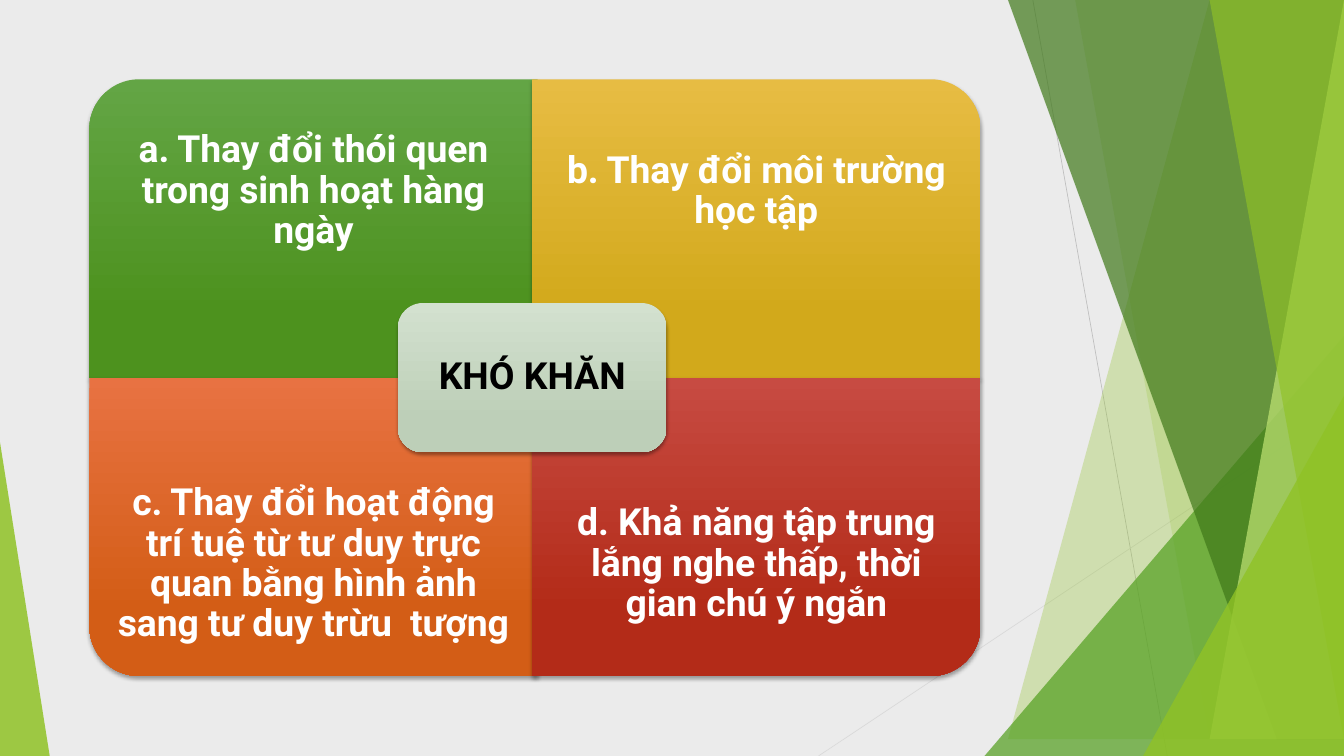
"""Builds a slide with four difficulties around a central label, beside green facets."""
import lxml.etree
import pptx
import pptx.dml.color
import pptx.enum.shapes
import pptx.enum.text
import pptx.oxml
import pptx.oxml.ns
import pptx.util

Inches = pptx.util.Inches
SHAPES = pptx.enum.shapes.MSO_SHAPE

WIDTH, HEIGHT = 20, 11.25
COLORS = {
    "background": "EBEBEB", "white": "FFFFFF", "black": "000000",
    "line": "BFBFBF", "pale line": "D9D9D9",
    "lime": "90C226", "green": "54A021", "forest": "3F7819", "mint": "C0E474",
}
LINES = [((15.37, 0), (17.37, HEIGHT), "line"), ((WIDTH, 6.04), (12.18, HEIGHT), "pale line")]
FACETS = [
    ("band", (18.42, 15.06), "lime", 30),
    ("band", (15.75, 17.74), "lime", 20),
    ("triangle", (14.65, 5, 5.35, 6.25, 1), "green", 72),
    ("band", (15.31, 19.37), "forest", 70),
    ("band", (19.55, 17.88), "mint", 70),
    ("band", (17.94, 19.76), "lime", 65),
    ("triangle", (17.01, 5.89, 2.99, 5.36, 1), "lime", 80),
    ("triangle", (0, 6.58, 0.74, 4.67, 0), "lime", 85),
]
PANEL_LEFT, PANEL_TOP, PANEL_STEP = 1.33, 1.18, 6.59
PANEL_WIDTH, PANEL_HEIGHT, TEXT_HEIGHT = 6.67, 4.44, 3.33
PANELS = [
    (0, 0, 270, "63A545", "4D921E", ["a. Thay ", "đổi ", "thói quen trong sinh hoạt hàng ngày"]),
    (1, 0, 0, "E7BC43", "D2A91B", ["b. Thay đổi môi trường học tập"]),
    (0, 1, 180, "E87242", "D35D16",
     ["c. Thay đổi hoạt động trí tuệ từ tư ", "duy ", "trực quan bằng hình ảnh sang tư ",
      "duy ", "trừu  tượng"]),
    (1, 1, 90, "C74B42", "B32B18",
     ["d. K", "hả ", "năng tập ", "trung ", "lắng ", "nghe ", "thấp, thời gian chú ý ngắn"]),
]
CENTER = ((5.92, 4.51, 4, 2.22), "D3E1CF", "BDCFB8", ["KHÓ KHĂN"])


def rgb(name):
    return pptx.dml.color.RGBColor.from_string(COLORS[name])


def lengths(values):
    return [Inches(value) for value in values]


def add_line(slide, start, end, color):
    line = slide.shapes.add_connector(
        pptx.enum.shapes.MSO_CONNECTOR.STRAIGHT, *lengths(start + end))
    line.line.color.rgb = rgb(color)
    line.line.width = pptx.util.Pt(0.75)
    lxml.etree.SubElement(line._element.spPr, pptx.oxml.ns.qn("a:effectLst"))


def add_facet(slide, kind, geometry, color, opacity):
    if kind == "band":
        top_x, bottom_x = geometry
        builder = slide.shapes.build_freeform(top_x, 0, scale=Inches(1))
        builder.add_line_segments([(WIDTH, 0), (WIDTH, HEIGHT), (bottom_x, HEIGHT)])
        facet = builder.convert_to_shape()
    else:
        facet = slide.shapes.add_shape(SHAPES.ISOSCELES_TRIANGLE, *lengths(geometry[:4]))
        facet.adjustments[0] = geometry[4]
    facet.shadow.inherit = False
    facet.line.fill.background()
    facet.fill.solid()
    facet.fill.fore_color.rgb = rgb(color)
    tint = facet._element.spPr.find(".//" + pptx.oxml.ns.qn("a:srgbClr"))
    lxml.etree.SubElement(tint, pptx.oxml.ns.qn("a:alpha"), val=str(opacity * 1000))


def add_panel(slide, preset, area, rotation, light, dark):
    left, top, width, height = area
    if rotation % 180:
        left, top = left + (width - height) / 2, top + (height - width) / 2
        width, height = height, width
    panel = slide.shapes.add_shape(preset, *lengths((left, top, width, height)))
    panel.rotation = rotation
    panel.line.fill.background()
    panel.shadow.inherit = False
    namespace = pptx.oxml.ns.nsdecls("a")
    properties = panel._element.spPr
    gradient = pptx.oxml.parse_xml(
        f'<a:gradFill {namespace} rotWithShape="0"><a:gsLst>'
        f'<a:gs pos="0"><a:srgbClr val="{light}"/></a:gs>'
        f'<a:gs pos="78000"><a:srgbClr val="{dark}"/></a:gs>'
        '</a:gsLst><a:lin ang="5400000" scaled="0"/></a:gradFill>')
    properties.find(pptx.oxml.ns.qn("a:prstGeom")).addnext(gradient)
    properties.find(pptx.oxml.ns.qn("a:effectLst")).append(pptx.oxml.parse_xml(
        f'<a:outerShdw {namespace} blurRad="50800" dist="38100" dir="5400000" rotWithShape="0">'
        f'<a:srgbClr val="{COLORS["black"]}"><a:alpha val="35000"/></a:srgbClr></a:outerShdw>'))


def add_label(slide, area, spans, color, inset):
    box = slide.shapes.add_textbox(*lengths(area))
    frame = box.text_frame
    frame.word_wrap = True
    frame.vertical_anchor = pptx.enum.text.MSO_ANCHOR.MIDDLE
    frame.margin_left = frame.margin_right = Inches(inset)
    frame.margin_top = frame.margin_bottom = Inches(inset)
    para = frame.paragraphs[0]
    para.alignment = pptx.enum.text.PP_ALIGN.CENTER
    para.line_spacing = 0.9
    for index, text in enumerate(spans):
        span = para.add_run()
        span.text = text
        span.font.name = "Roboto"
        span.font.size = pptx.util.Pt(40)
        span.font.bold = True
        span.font.color.rgb = rgb(color)
        if color == "white" and index % 2 == 0:
            span.font._element.set("spc", "-10")


def main():
    deck = pptx.Presentation()
    deck.slide_width, deck.slide_height = Inches(WIDTH), Inches(HEIGHT)
    slide = deck.slides.add_slide(deck.slide_layouts[6])
    slide.background.fill.solid()
    slide.background.fill.fore_color.rgb = rgb("background")
    for line in LINES:
        add_line(slide, *line)
    for facet in FACETS:
        add_facet(slide, *facet)
    for column, row, rotation, light, dark, spans in PANELS:
        left = PANEL_LEFT + column * PANEL_STEP
        top = PANEL_TOP + row * PANEL_HEIGHT
        text_top = top + row * (PANEL_HEIGHT - TEXT_HEIGHT)
        add_panel(slide, SHAPES.ROUND_1_RECTANGLE, (left, top, PANEL_WIDTH, PANEL_HEIGHT),
                  rotation, light, dark)
        add_label(slide, (left, text_top, PANEL_WIDTH, TEXT_HEIGHT), spans, "white", 0.31)
    area, light, dark, spans = CENTER
    left, top, width, height = area
    add_panel(slide, SHAPES.ROUNDED_RECTANGLE, area, 0, light, dark)
    add_label(slide, (left + 0.11, top + 0.11, width - 0.22, height - 0.22), spans, "black", 0.17)
    deck.save("out.pptx")


if __name__ == "__main__":
    main()
